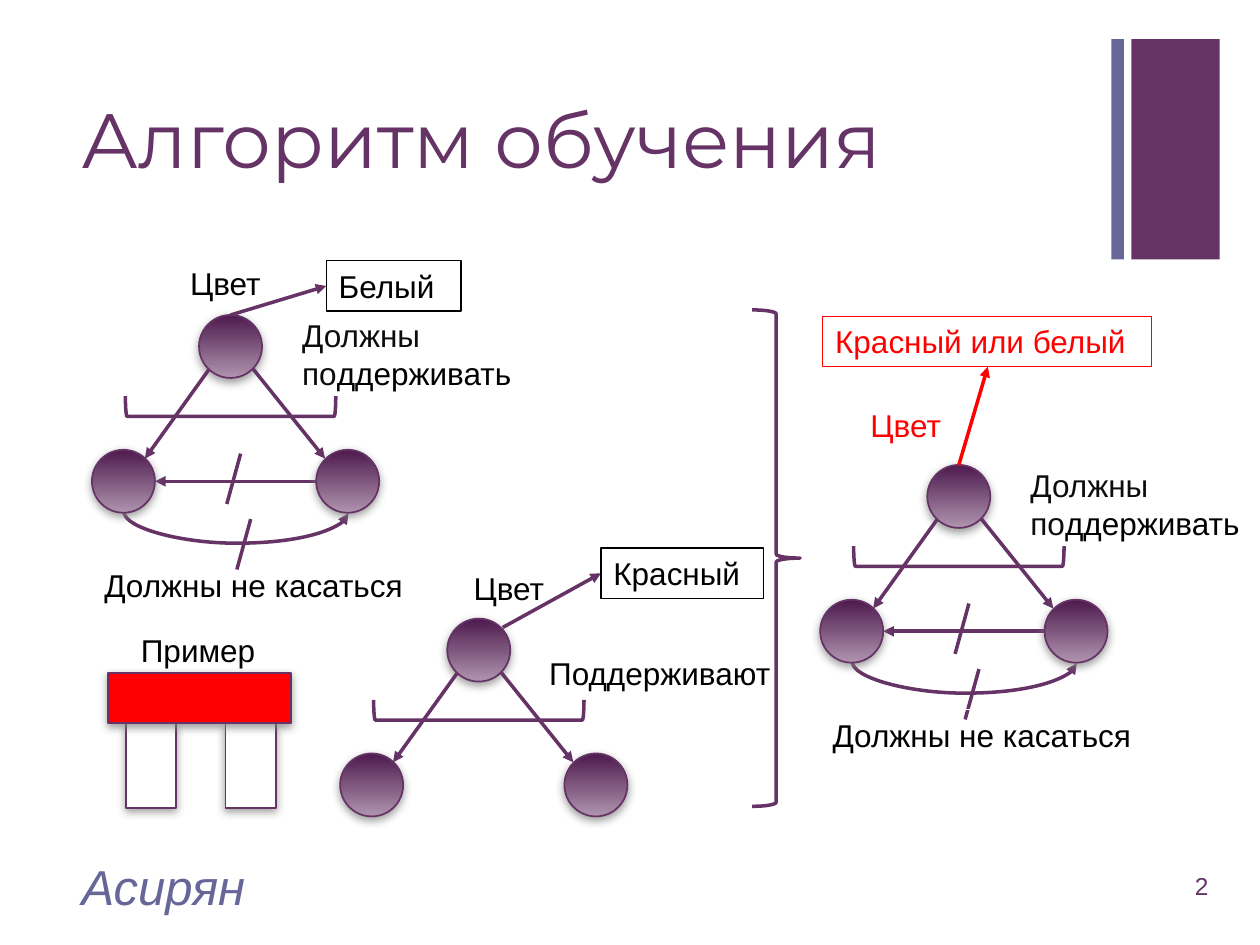
from lxml.etree import SubElement
from pptx import Presentation
from pptx.dml.color import RGBColor
from pptx.enum.shapes import MSO_CONNECTOR as Connector, MSO_SHAPE as Shape
from pptx.enum.text import MSO_ANCHOR as Anchor, PP_ALIGN as Align
from pptx.oxml.ns import qn
from pptx.util import Emu, Pt

PX = 9144  # 100 px to the inch
COLORS = {
    "plum": "663366", "slate": "666699", "black": "000000", "ink": "0D0D0D",
    "white": "FFFFFF", "red": "FF0000", "shadow": "808080",
    "node_dark": "4D1A4D", "node_light": "AF94AF",
}
NODE = 50


def px(*lengths):
    return [Emu(length * PX) for length in lengths]


def rgb(name):
    return RGBColor.from_string(COLORS[name])


def add_shape(shapes, kind, box, fill=None, line=None, width=1, shadow=False):
    shape = shapes.add_shape(kind, *px(*box))
    shape.shadow.inherit = False
    if fill:
        shape.fill.solid()
        shape.fill.fore_color.rgb = rgb(fill)
    else:
        shape.fill.background()
    if line:
        shape.line.color.rgb = rgb(line)
        shape.line.width = Pt(width)
    else:
        shape.line.fill.background()
    if shadow:
        effects = shape._element.spPr.find(qn("a:effectLst"))
        outer = SubElement(effects, qn("a:outerShdw"), blurRad=str(Pt(5)),
                           dist=str(Pt(2)), dir="5400000", rotWithShape="0")
        color = SubElement(outer, qn("a:srgbClr"), val=COLORS["shadow"])
        SubElement(color, qn("a:alpha"), val="75000")
    return shape


def add_line(shapes, start, end, color="plum", arrow=False, kind=Connector.STRAIGHT):
    line = shapes.add_connector(kind, *px(*start, *end))
    line.line.color.rgb = rgb(color)
    line.line.width = Pt(2)
    if arrow:
        SubElement(line.line._get_or_add_ln(), qn("a:tailEnd"), type="triangle")
    SubElement(line._element.spPr, qn("a:effectLst"))
    return line


def add_run(paragraph, text, color="black", size=18, font="Arial", italic=None):
    run = paragraph.add_run()
    run.text = text
    run.font.size = Pt(size)
    run.font.name = font
    run.font.italic = italic
    run.font.color.rgb = rgb(color)


def add_label(shapes, box, text="", color="black", border=None, anchor=Anchor.TOP, **style):
    """Add a text box, framed if a border colour is given; return its paragraph."""
    label = shapes.add_textbox(*px(*box))
    if border:
        label.line.color.rgb = rgb(border)
        label.line.width = Pt(0.75)
    label.text_frame.word_wrap = True
    label.text_frame.vertical_anchor = anchor
    paragraph = label.text_frame.paragraphs[0]
    if text:
        add_run(paragraph, text, color, **style)
    return paragraph


def add_node(shapes, left, top):
    node = add_shape(shapes, Shape.FLOWCHART_CONNECTOR, (left, top, NODE, NODE),
                     line="plum", shadow=True)
    node.fill.gradient()
    node.fill.gradient_angle = 270
    for stop, color in zip(node.fill.gradient_stops, ("node_dark", "node_light")):
        stop.color.rgb = rgb(color)


def add_bracket(shapes, left, top):
    bracket = add_shape(shapes, Shape.RIGHT_BRACKET, (left, top, 16, 167),
                        line="plum", width=2)
    bracket.rotation = 90


def add_not_touching(shapes, left, top):
    """Add the two crossed-out arrows between the lower nodes of an arch."""
    depth, span = 25, 178
    curve = add_line(shapes, (left + 114, top + 68), (left + 115, top + 68 + span),
                     arrow=True, kind=Connector.CURVE)
    transform = curve._element.spPr.find(qn("a:xfrm"))
    transform.set("rot", "16200000")
    transform.set("flipH", "1")
    guides = curve._element.spPr.find(qn("a:prstGeom")).get_or_add_avLst()
    SubElement(guides, qn("a:gd"), name="adj1", fmla=f"val {depth * 100000}")
    add_line(shapes, (left + span, top + 132), (left + NODE, top + 132), arrow=True)
    for x, y in ((118, 110), (126, 162)):
        add_line(shapes, (left + x, top + y), (left + x - 11, top + y + 40))


def add_arch(shapes, left, top):
    for x, y in ((85, 0), (178, 107), (0, 107)):
        add_node(shapes, left + x, top + y)
    for start_x, end_x in ((93, 42), (128, 185)):
        add_line(shapes, (left + start_x, top + 43), (left + end_x, top + 114), arrow=True)
    add_bracket(shapes, left + 102, top - 11)


def add_rule_arch(slide, left, top, border=None):
    """Add a grouped arch with its "must" and "must not" rules."""
    shapes = slide.shapes.add_group_shape().shapes
    add_not_touching(shapes, left, top)
    add_arch(shapes, left, top)
    paragraph = add_label(shapes, (left + 157, top - 4, 299, 71))
    add_run(paragraph, "Должны ", "ink")
    paragraph.add_line_break()
    add_run(paragraph, "по", "ink")
    add_run(paragraph, "ддерживать")
    add_label(shapes, (left, top + 194, 353, 40), "Должны не касаться", border=border)


def add_color_link(slide, start, end, label_box, value_box, value, color="black", arrow="plum"):
    add_line(slide.shapes, start, end, arrow, arrow=True)
    add_label(slide.shapes, label_box, "Цвет", color)
    add_label(slide.shapes, value_box, value, color, border=color)


def add_example(slide, left, top):
    add_label(slide.shapes, (left + 16, top - 38, 113, 40), "Пример")
    shapes = slide.shapes.add_group_shape().shapes
    for box, fill in (((14, 40, 40, 67), "white"), ((93, 40, 40, 67), "white"),
                      ((0, 0, 145, 40), "red")):
        x, y, width, height = box
        add_shape(shapes, Shape.FLOWCHART_PROCESS, (left + x, top + y, width, height),
                  fill, "plum", shadow=True)


def add_frame(slide):
    """Add the corner bars, title, footer and page number."""
    shapes = slide.shapes
    add_shape(shapes, Shape.RECTANGLE, (898, 31, 70, 175), "plum")
    add_shape(shapes, Shape.RECTANGLE, (882, 31, 10, 175), "slate")
    title = add_label(shapes, (55, 53, 826, 122), "Алгоритм обучения", "plum",
                      anchor=Anchor.MIDDLE, size=44, font="Montserrat")
    title.line_spacing = 0.9
    add_label(shapes, (55, 683, 670, 40), "Асирян", "slate",
              anchor=Anchor.MIDDLE, size=28, italic=True)
    number = add_label(shapes, (908, 683, 61, 40), "2", "plum",
                       anchor=Anchor.MIDDLE, size=14)
    number.alignment = Align.RIGHT


def main():
    presentation = Presentation()
    presentation.slide_width, presentation.slide_height = px(1000, 750)
    slide = presentation.slides.add_slide(presentation.slide_layouts[6])
    add_frame(slide)
    add_shape(slide.shapes, Shape.RIGHT_BRACE, (597, 246, 38, 394), line="plum", width=2)
    add_rule_arch(slide, 73, 250)
    add_example(slide, 86, 534)
    add_arch(slide.shapes, 270, 491)
    add_label(slide.shapes, (426, 514, 261, 40), "Поддерживают")
    add_color_link(slide, (399, 498), (477, 455), (366, 447, 261, 40),
                   (477, 435, 129, 40), "Красный")
    add_rule_arch(slide, 651, 369, border="white")
    add_color_link(slide, (761, 369), (784, 291), (681, 317, 261, 40),
                   (653, 251, 261, 40), "Красный или белый", "red", "red")
    add_color_link(slide, (183, 250), (259, 227), (141, 205, 261, 40),
                   (259, 207, 107, 40), "Белый")
    presentation.save("out.pptx")


if __name__ == "__main__":
    main()
